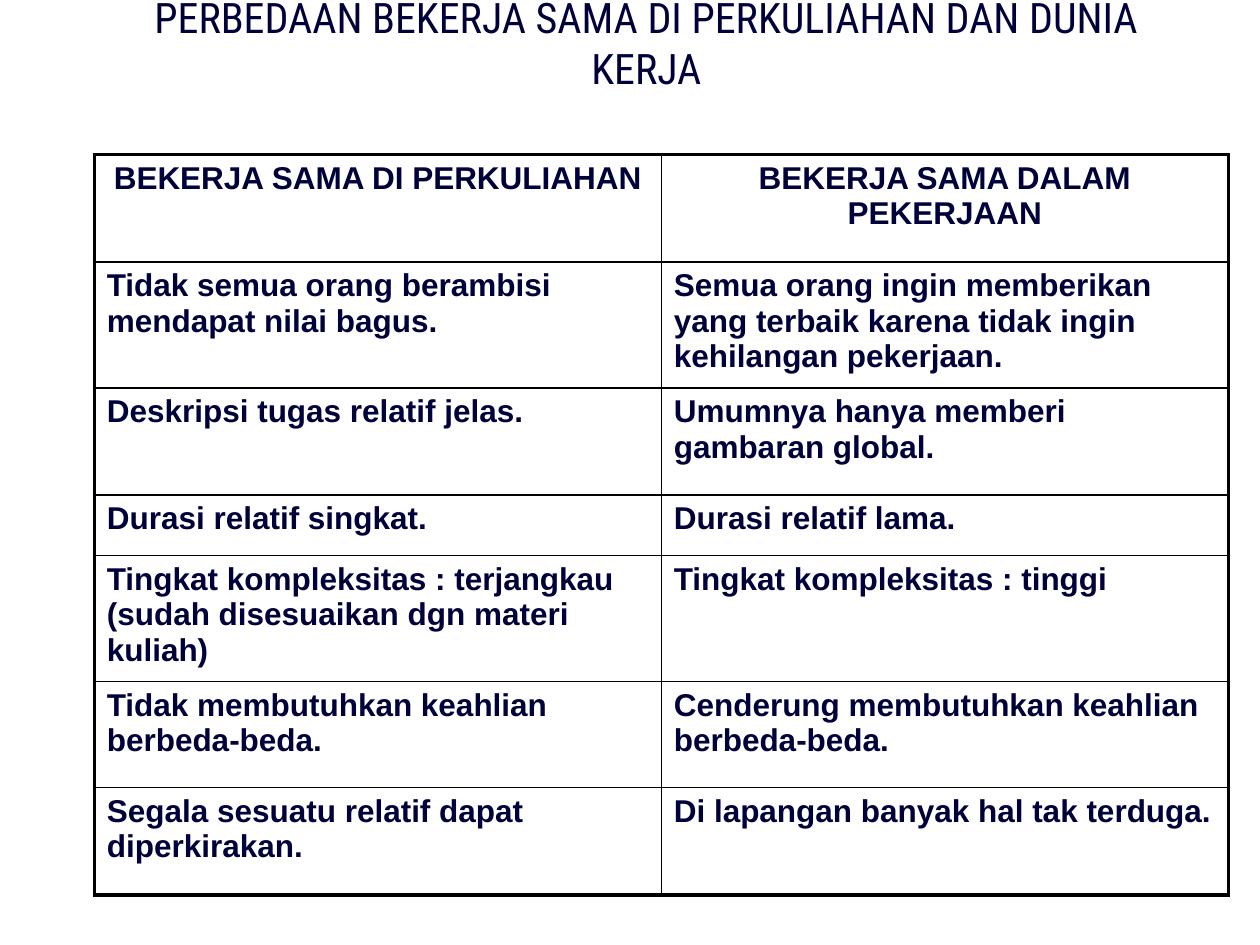
from lxml.etree import SubElement
from pptx import Presentation
from pptx.dml.color import RGBColor
from pptx.enum.text import MSO_ANCHOR, MSO_AUTO_SIZE, PP_ALIGN
from pptx.oxml.ns import qn
from pptx.util import Cm, Pt

NAVY = RGBColor(0x00, 0x00, 0x3A)
BLACK = RGBColor(0x00, 0x00, 0x00)
OUTER_BORDER, INNER_BORDER = Pt(2.25), Pt(1)

TITLE = "PERBEDAAN BEKERJA SAMA DI PERKULIAHAN DAN DUNIA KERJA"
COMPARISON = [
    ("BEKERJA SAMA DI PERKULIAHAN", "BEKERJA SAMA DALAM PEKERJAAN"),
    ("Tidak semua orang berambisi mendapat nilai bagus.",
     "Semua orang ingin memberikan yang terbaik karena tidak ingin kehilangan pekerjaan."),
    ("Deskripsi tugas relatif jelas.", "Umumnya hanya memberi gambaran global."),
    ("Durasi relatif singkat.", "Durasi relatif lama."),
    ("Tingkat kompleksitas : terjangkau (sudah disesuaikan dgn materi kuliah)",
     "Tingkat kompleksitas : tinggi"),
    ("Tidak membutuhkan keahlian berbeda-beda.",
     "Cenderung membutuhkan keahlian berbeda-beda."),
    ("Segala sesuatu relatif dapat diperkirakan.", "Di lapangan banyak hal tak terduga."),
]
ROW_HEIGHTS = [Cm(height) for height in (2.16, 2.54, 2.16, 1.22, 2.54, 2.14, 2.16)]


def write_text(frame, text, *, font="Arial", size=18, bold=False, align=PP_ALIGN.LEFT):
    """Write one formatted paragraph into a text frame."""
    para = frame.paragraphs[0]
    para.alignment = align
    span = para.add_run()
    span.text = text
    span.font.name = font
    span.font.size = Pt(size)
    span.font.bold = bold
    span.font.color.rgb = NAVY


def set_borders(cell, widths):
    """Draw the cell's borders from a mapping of side letter to width."""
    properties = cell._tc.get_or_add_tcPr()
    for side in "LRTB":
        line = SubElement(properties, qn(f"a:ln{side}"), w=str(widths[side]))
        fill = SubElement(line, qn("a:solidFill"))
        SubElement(fill, qn("a:srgbClr"), val=str(BLACK))


def place_title(page, left, top, width, height):
    """Place and format the title placeholder in the given box."""
    title = page.shapes.title
    title.left, title.top, title.width, title.height = left, top, width, height
    frame = title.text_frame
    frame.word_wrap = True
    frame.auto_size = MSO_AUTO_SIZE.NONE
    frame.vertical_anchor = MSO_ANCHOR.MIDDLE
    write_text(frame, TITLE, font="Roboto Condensed", size=24, align=PP_ALIGN.CENTER)


def place_comparison(page, left, top, width, height):
    """Place the two-column comparison table in the given box."""
    last_row, last_column = len(COMPARISON) - 1, len(COMPARISON[0]) - 1
    table = page.shapes.add_table(
        last_row + 1, last_column + 1, left, top, width, height).table
    table.first_row = table.horz_banding = False
    for row, row_height in zip(table.rows, ROW_HEIGHTS):
        row.height = row_height
    for row, texts in enumerate(COMPARISON):
        for column, text in enumerate(texts):
            cell = table.cell(row, column)
            on_edge = {"L": column == 0, "R": column == last_column,
                       "T": row == 0, "B": row == last_row}
            set_borders(cell, {side: OUTER_BORDER if outer else INNER_BORDER
                               for side, outer in on_edge.items()})
            cell.fill.background()
            write_text(cell.text_frame, text, bold=True,
                       align=PP_ALIGN.CENTER if row == 0 else PP_ALIGN.LEFT)


def main():
    """Build the deck and save it."""
    deck = Presentation()
    deck.slide_width, deck.slide_height = Cm(25.4), Cm(19.05)
    page = deck.slides.add_slide(deck.slide_layouts[5])
    place_title(page, Cm(1.7), Cm(0), Cm(22.66), Cm(1.7))
    place_comparison(page, Cm(1.9), Cm(3.12), Cm(22.86), sum(ROW_HEIGHTS))
    deck.save("out.pptx")


if __name__ == "__main__":
    main()
